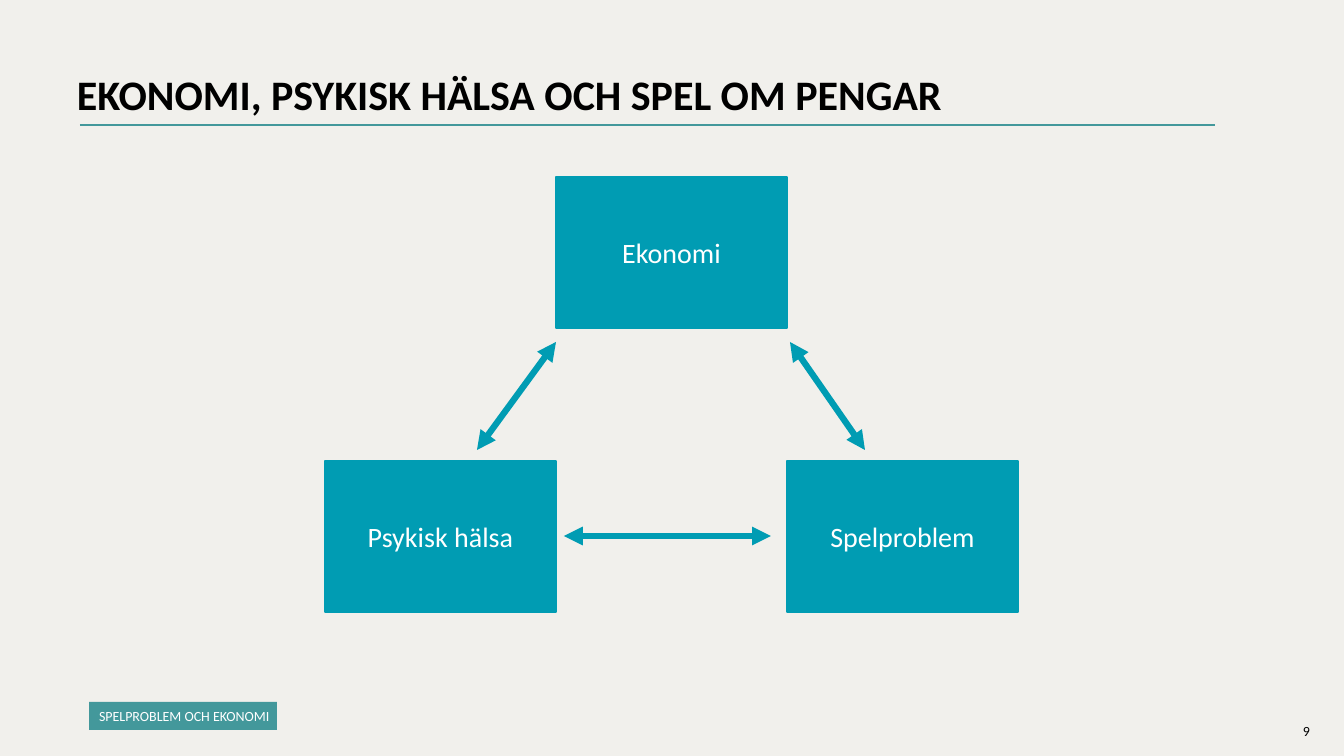
from lxml import etree
from pptx import Presentation
from pptx.dml.color import RGBColor
from pptx.enum.shapes import MSO_CONNECTOR, MSO_SHAPE
from pptx.enum.text import MSO_ANCHOR, PP_ALIGN
from pptx.oxml.ns import qn
from pptx.util import Pt

PX = 9071.43
WIDTH, HEIGHT = 1344, 756

RECTANGLE = MSO_SHAPE.RECTANGLE
STRAIGHT = MSO_CONNECTOR.STRAIGHT
TOP, MIDDLE = MSO_ANCHOR.TOP, MSO_ANCHOR.MIDDLE
LEFT, CENTER = PP_ALIGN.LEFT, PP_ALIGN.CENTER

PAPER = RGBColor(0xF1, 0xF0, 0xEC)
GREEN = RGBColor(0x43, 0x98, 0x9B)
TEAL = RGBColor(0x00, 0x9C, 0xB3)
BLACK = RGBColor(0, 0, 0)
WHITE = RGBColor(0xFF, 0xFF, 0xFF)


def emu(*lengths):
    return [round(length * PX) for length in lengths]


def write(shape, text, size, color, bold=False, align=LEFT, anchor=TOP,
          insets=(10, 5, 10, 5), wrap=True, spacing=1.0):
    frame = shape.text_frame
    frame.word_wrap = wrap
    frame.vertical_anchor = anchor
    (frame.margin_left, frame.margin_top,
     frame.margin_right, frame.margin_bottom) = emu(*insets)
    paragraph = frame.paragraphs[0]
    paragraph.text = text
    paragraph.alignment = align
    paragraph.line_spacing = spacing
    font = paragraph.font
    font.name = "Calibri"
    font.size = Pt(size)
    font.bold = bold
    font.color.rgb = color


def add_rectangle(slide, box, color):
    shape = slide.shapes.add_shape(RECTANGLE, *emu(*box))
    shape.shadow.inherit = False
    shape.fill.solid()
    shape.fill.fore_color.rgb = color
    shape.line.fill.background()
    return shape


def add_line(slide, start, end, color, width, arrows=False):
    line = slide.shapes.add_connector(STRAIGHT, *emu(*start, *end))
    line.line.color.rgb = color
    line.line.width = Pt(width)
    if arrows:
        outline = line.line._get_or_add_ln()
        for tag in ("a:headEnd", "a:tailEnd"):
            etree.SubElement(outline, qn(tag), type="triangle")
    etree.SubElement(line._element.spPr, qn("a:effectLst"))


def add_title(slide, box):
    left, top, width, height = box
    rule = top + 56
    add_line(slide, (left + 13, rule), (left + 1148, rule), GREEN, 1.5)
    title = slide.shapes.add_textbox(*emu(*box))
    write(title, "EKONOMI, PSYKISK HÄLSA OCH SPEL OM PENGAR", 30, BLACK,
          bold=True, spacing=0.9)


def add_triangle(slide, box):
    left, top, width, height = box
    node_width, node_height = width // 3, 151
    lower = height - node_height
    nodes = [
        ("Ekonomi", node_width, 0),
        ("Psykisk hälsa", 0, lower),
        ("Spelproblem", 2 * node_width, lower),
    ]
    for label, x, y in nodes:
        node = add_rectangle(
            slide, (left + x, top + y, node_width, node_height), TEAL)
        node.line.color.rgb = TEAL
        node.line.width = Pt(1)
        write(node, label, 20, WHITE, align=CENTER, anchor=MIDDLE)

    above, below = top + node_height + 14, top + lower - 11
    middle = top + lower + node_height // 2
    arrows = [
        ((left + 231, above), (left + 152, below)),
        ((left + 446, middle), (left + 239, middle)),
        ((left + 465, above), (left + 540, below)),
    ]
    for start, end in arrows:
        add_line(slide, start, end, TEAL, 4.5, arrows=True)


def add_footer(slide, label_box, number_box):
    label = add_rectangle(slide, label_box, GREEN)
    write(label, "SPELPROBLEM OCH EKONOMI", 10, WHITE, anchor=MIDDLE,
          insets=(10, 8, 4, 5), wrap=False, spacing=0.9)
    number = slide.shapes.add_textbox(*emu(*number_box))
    write(number, "9", 10, BLACK)


def main():
    presentation = Presentation()
    presentation.slide_width, presentation.slide_height = emu(WIDTH, HEIGHT)
    slide = presentation.slides.add_slide(presentation.slide_layouts[6])
    slide.background.fill.solid()
    slide.background.fill.fore_color.rgb = PAPER
    add_title(slide, (67, 69, 1159, 94))
    add_triangle(slide, (325, 177, 693, 435))
    add_footer(slide, (89, 702, 188, 28), (1293, 718, 40, 27))
    presentation.save("out.pptx")


if __name__ == "__main__":
    main()
